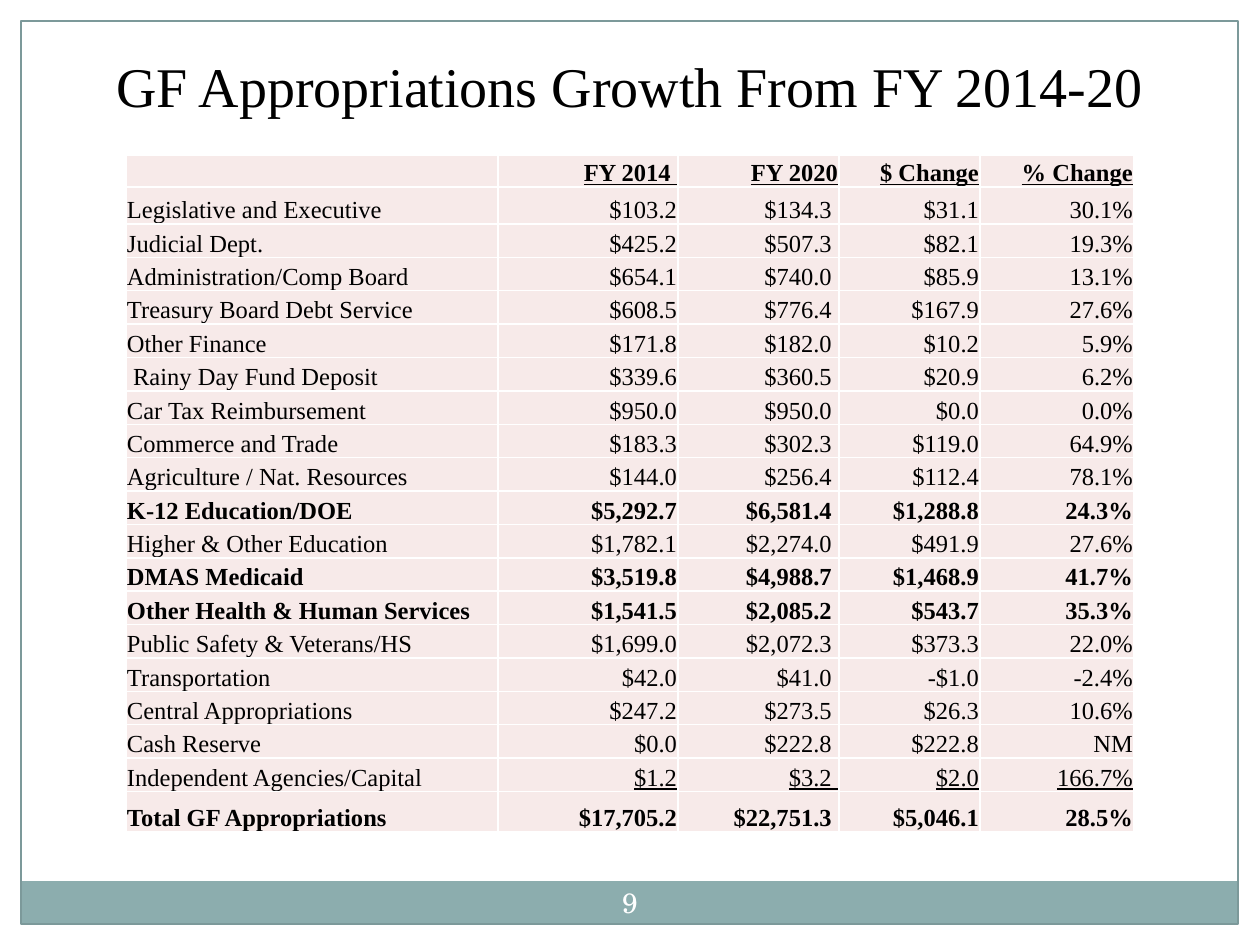
from lxml.etree import SubElement
from pptx import Presentation
from pptx.dml.color import RGBColor
from pptx.enum.shapes import MSO_SHAPE
from pptx.enum.text import MSO_ANCHOR as Anchor, PP_ALIGN as Align
from pptx.oxml.ns import qn
from pptx.util import Emu, Pt

WHITE = RGBColor(0xFF, 0xFF, 0xFF)
BLACK = RGBColor(0x00, 0x00, 0x00)
TEAL = RGBColor(0x8C, 0xAD, 0xAE)
FRAME_TEAL = RGBColor(0x7C, 0x99, 0x9A)
BLUSH = RGBColor(0xF7, 0xEA, 0xE9)
SERIF = "Times New Roman"

APPROPRIATIONS = [
    ("", "FY 2014 ", "FY 2020", "$ Change", "% Change"),
    ("Legislative and Executive", "$103.2", "$134.3 ", "$31.1", "30.1%"),
    ("Judicial Dept.", "$425.2", "$507.3 ", "$82.1", "19.3%"),
    ("Administration/Comp Board", "$654.1", "$740.0 ", "$85.9", "13.1%"),
    ("Treasury Board Debt Service", "$608.5", "$776.4 ", "$167.9", "27.6%"),
    ("Other Finance", "$171.8", "$182.0 ", "$10.2", "5.9%"),
    (" Rainy Day Fund Deposit", "$339.6", "$360.5 ", "$20.9", "6.2%"),
    ("Car Tax Reimbursement", "$950.0", "$950.0 ", "$0.0", "0.0%"),
    ("Commerce and Trade", "$183.3", "$302.3 ", "$119.0", "64.9%"),
    ("Agriculture / Nat. Resources", "$144.0", "$256.4 ", "$112.4", "78.1%"),
    ("K-12 Education/DOE", "$5,292.7", "$6,581.4 ", "$1,288.8", "24.3%"),
    ("Higher & Other Education", "$1,782.1", "$2,274.0 ", "$491.9", "27.6%"),
    ("DMAS Medicaid", "$3,519.8", "$4,988.7 ", "$1,468.9", "41.7%"),
    ("Other Health & Human Services", "$1,541.5", "$2,085.2 ", "$543.7", "35.3%"),
    ("Public Safety & Veterans/HS", "$1,699.0", "$2,072.3 ", "$373.3", "22.0%"),
    ("Transportation", "$42.0", "$41.0 ", "-$1.0", "-2.4%"),
    ("Central Appropriations", "$247.2", "$273.5 ", "$26.3", "10.6%"),
    ("Cash Reserve", "$0.0", "$222.8 ", "$222.8", "NM"),
    ("Independent Agencies/Capital", "$1.2", "$3.2 ", "$2.0", "166.7%"),
    ("Total GF Appropriations", "$17,705.2", "$22,751.3 ", "$5,046.1", "28.5%"),
]
LAST = len(APPROPRIATIONS) - 1
BOLD_ROWS = {0, 10, 12, 13, LAST}
UNDERLINED_ROWS = {0, LAST - 1}
COLUMN_WIDTHS = [372, 180, 161, 141, 154]


def px(count):
    return Emu(round(count * 914400 / 126))


def add_line_of_text(box, text, size, font_name, color):
    """Add a centred one-line text box and return its frame."""
    frame = slide.shapes.add_textbox(*map(px, box)).text_frame
    frame.word_wrap = True
    frame.text = text
    frame.paragraphs[0].alignment = Align.CENTER
    font = frame.paragraphs[0].runs[0].font
    font.size, font.name, font.color.rgb = Pt(size), font_name, color
    return frame


deck = Presentation()
deck.slide_width, deck.slide_height = px(1260), px(945)
slide = deck.slides.add_slide(deck.slide_layouts[6])

# White margins, footer band and frame
for box, fill, line in [
    ((0, 0, 1260, 21), WHITE, None),
    ((1239, 0, 21, 945), WHITE, None),
    ((0, 0, 21, 945), WHITE, None),
    ((21, 881, 1217, 43), TEAL, None),
    ((21, 21, 1217, 903), None, FRAME_TEAL),
]:
    panel = slide.shapes.add_shape(MSO_SHAPE.RECTANGLE, *map(px, box))
    panel.shadow.inherit = False
    if fill is None:
        panel.fill.background()
    else:
        panel.fill.solid()
        panel.fill.fore_color.rgb = fill
    if line is None:
        panel.line.fill.background()
    else:
        panel.line.color.rgb = line
        panel.line.width = Pt(0.75)

page_number = add_line_of_text((588, 872, 84, 60), "9", 16, "TeX Gyre Schola", WHITE)
page_number.vertical_anchor = Anchor.MIDDLE
page_number.margin_left = page_number.margin_right = px(6)

title = add_line_of_text((63, 38, 1134, 105),
                         "GF Appropriations Growth From FY 2014-20", 32, SERIF, BLACK)
title.margin_top = px(13)

# Appropriations table
table = slide.shapes.add_table(len(APPROPRIATIONS), len(COLUMN_WIDTHS),
                               px(126), px(155), px(1008), px(677)).table
table.first_row = table.horz_banding = False
for column, width in zip(table.columns, COLUMN_WIDTHS):
    column.width = px(width)
special_heights = {0: px(32), 1: px(37), LAST: px(40)}
body_height = px(568) // (len(APPROPRIATIONS) - len(special_heights))

for r, entries in enumerate(APPROPRIATIONS):
    table.rows[r].height = special_heights.get(r, body_height)
    for c, entry in enumerate(entries):
        cell = table.cell(r, c)
        cell.margin_left = cell.margin_right = cell.margin_top = px(1)
        cell.margin_bottom = 0
        cell.vertical_anchor = Anchor.BOTTOM
        properties = cell._tc.get_or_add_tcPr()
        for side in ("a:lnL", "a:lnR", "a:lnT", "a:lnB"):
            border = SubElement(properties, qn(side), w=str(Pt(1)))
            SubElement(SubElement(border, qn("a:solidFill")), qn("a:srgbClr"), val=str(WHITE))
        cell.fill.solid()
        cell.fill.fore_color.rgb = BLUSH

        paragraph = cell.text_frame.paragraphs[0]
        if not entry:
            # A blank cell needs its own text size, or it makes the row taller
            SubElement(paragraph._p, qn("a:endParaRPr"), sz="1400")
            continue
        paragraph.text = entry
        paragraph.alignment = Align.RIGHT if c else Align.LEFT
        font = paragraph.runs[0].font
        font.size, font.name, font.color.rgb = Pt(14), SERIF, BLACK
        font.bold = r in BOLD_ROWS
        font.underline = r in UNDERLINED_ROWS and c > 0

deck.save("out.pptx")
